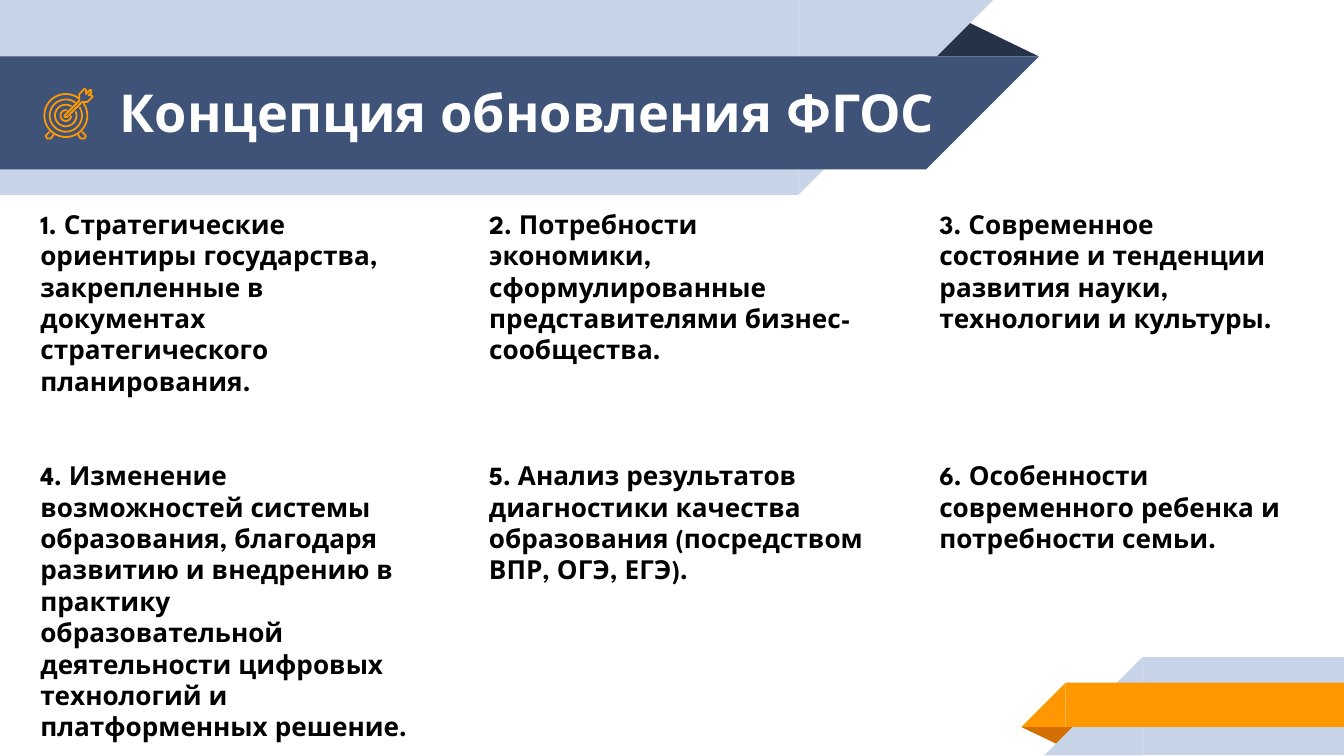
from dataclasses import dataclass
from math import cos, radians, sin

from pptx import Presentation
from pptx import util as u
from pptx.dml import color
from pptx.enum import shapes, text
from pptx.oxml import xmlchemy

COLORS = {
    "pale": "C7D3E6",
    "navy": "3F5378",
    "navy_fold": "263248",
    "orange": "FF9800",
    "orange_fold": "D26F00",
    "white": "FFFFFF",
    "black": "000000",
}
FONT = "League Spartan"
KIND = shapes.MSO_SHAPE
SLIDE_WIDTH = u.Inches(10)
SLIDE_HEIGHT = SLIDE_WIDTH * 9 // 16
TARGET_CENTER = (0.49, 0.86)


@dataclass
class Ribbon:
    kind: shapes.MSO_SHAPE
    left: float
    top: float
    width: float
    height: float
    color: str
    rotation: int = 0


@dataclass
class Ring:
    radius: float
    gap_start: int
    gap_end: int


@dataclass
class Column:
    left: float
    width: float


RIBBONS = [
    Ribbon(KIND.ISOSCELES_TRIANGLE, 6.88, 0.14, 0.85, 0.28, "navy_fold"),
    Ribbon(KIND.RECTANGLE, 0, 0, 5.94, 1.45, "pale"),
    Ribbon(KIND.RIGHT_TRIANGLE, 5.94, 0, 1.45, 1.45, "pale", 90),
    Ribbon(KIND.RECTANGLE, 0, 0.42, 6.89, 0.84, "navy"),
    Ribbon(KIND.RIGHT_TRIANGLE, 6.89, 0.42, 0.84, 0.84, "navy", 90),
    Ribbon(KIND.ISOSCELES_TRIANGLE, 7.6, 5.41, 0.43, 0.14, "orange_fold", 180),
    Ribbon(KIND.RECTANGLE, 8.5, 4.89, 1.5, 0.73, "pale"),
    Ribbon(KIND.RIGHT_TRIANGLE, 7.77, 4.89, 0.73, 0.73, "pale", 270),
    Ribbon(KIND.RECTANGLE, 7.93, 5.08, 2.08, 0.33, "orange"),
    Ribbon(KIND.RIGHT_TRIANGLE, 7.6, 5.08, 0.33, 0.33, "orange", 270),
]
RINGS = [Ring(0.16, -53, -35), Ring(0.12, -53, -32), Ring(0.08, -57, -22), Ring(0.04, -72, 0)]
LEFT_FOOT = [(0.37, 0.98), (0.35, 1), (0.34, 1.01), (0.35, 1.03), (0.36, 1.03), (0.38, 1.03), (0.4, 1)]
RIGHT_FOOT = [(2 * TARGET_CENTER[0] - x, y) for x, y in LEFT_FOOT]
ARROW = [
    (0.68, 0.71), (0.66, 0.71), (0.68, 0.69), (0.68, 0.67), (0.67, 0.67), (0.64, 0.7),
    (0.64, 0.67), (0.63, 0.66), (0.59, 0.7), (0.59, 0.75), (0.48, 0.86), (0.48, 0.87),
    (0.5, 0.87), (0.61, 0.76), (0.64, 0.76), (0.65, 0.76), (0.69, 0.72),
]
COLUMNS = [Column(0.2, 2.98), Column(3.54, 3), Column(6.89, 2.78)]
ROW_TOPS = [1.45, 3.32]
REASONS = [
    "1. Стратегические ориентиры государства, закрепленные в документах стратегического планирования.",
    "2. Потребности экономики, сформулированные представителями бизнес-сообщества.",
    "3. Современное состояние и тенденции развития науки, технологии и культуры.",
    "4. Изменение возможностей системы образования, благодаря развитию и внедрению в практику "
    "образовательной деятельности цифровых технологий и платформенных решение.",
    "5. Анализ результатов диагностики качества образования (посредством ВПР, ОГЭ, ЕГЭ).",
    "6. Особенности современного ребенка и потребности семьи.",
]


def rgb(name: str) -> color.RGBColor:
    return color.RGBColor.from_string(COLORS[name])


def draw_ribbon(slide, ribbon: Ribbon) -> None:
    box = map(u.Inches, (ribbon.left, ribbon.top, ribbon.width, ribbon.height))
    band = slide.shapes.add_shape(ribbon.kind, *box)
    band.rotation = ribbon.rotation
    band.shadow.inherit = False
    band.fill.solid()
    band.fill.fore_color.rgb = rgb(ribbon.color)
    band.line.fill.background()
    if ribbon.kind == KIND.ISOSCELES_TRIANGLE:
        band.adjustments[0] = 0.32


def draw_stroke(slide, points: list[tuple[float, float]], close: bool = False) -> None:
    start, *rest = [(u.Inches(x), u.Inches(y)) for x, y in points]
    builder = slide.shapes.build_freeform(*start)
    builder.add_line_segments(rest, close=close)
    stroke = builder.convert_to_shape()
    stroke.shadow.inherit = False
    stroke.fill.background()
    stroke.line.color.rgb = rgb("orange")
    stroke.line.width = u.Pt(0.96)


def ring_points(ring: Ring, steps: int = 48) -> list[tuple[float, float]]:
    sweep = 360 - (ring.gap_end - ring.gap_start)
    angles = [radians(ring.gap_end + sweep * i / steps) for i in range(steps + 1)]
    x, y = TARGET_CENTER
    return [(x + ring.radius * cos(a), y + ring.radius * sin(a)) for a in angles]


def write(holder, content: str, *, left: float, top: float, width: float, height: float,
          size: int, ink: str, anchor=text.MSO_ANCHOR.TOP, before: int = 0) -> None:
    holder.left, holder.top = u.Inches(left), u.Inches(top)
    holder.width, holder.height = u.Inches(width), u.Inches(height)
    frame = holder.text_frame
    frame.word_wrap = True
    frame.auto_size = text.MSO_AUTO_SIZE.NONE
    frame.vertical_anchor = anchor
    frame.margin_left = frame.margin_right = u.Inches(0.1)
    frame.margin_top = frame.margin_bottom = u.Inches(0.1)
    frame.text = content
    paragraph = frame.paragraphs[0]
    paragraph.alignment = text.PP_ALIGN.LEFT
    paragraph.space_before = u.Pt(before)
    properties = paragraph._p.get_or_add_pPr()
    properties.set("marL", "0")
    properties.set("indent", "0")
    properties.append(xmlchemy.OxmlElement("a:buNone"))
    font = paragraph.runs[0].font
    font.name, font.size, font.bold = FONT, u.Pt(size), True
    font.color.rgb = rgb(ink)
    holder.element.getparent().append(holder.element)


def main() -> None:
    deck = Presentation()
    deck.slide_width, deck.slide_height = SLIDE_WIDTH, SLIDE_HEIGHT
    slide = deck.slides.add_slide(deck.slide_layouts.get_by_name("Comparison"))
    title, *bodies = list(slide.placeholders)

    for ribbon in RIBBONS:
        draw_ribbon(slide, ribbon)

    write(title, "Концепция обновления ФГОС", left=0.79, top=0.41, width=6.68, height=0.84,
          size=28, ink="white", anchor=text.MSO_ANCHOR.MIDDLE)

    while len(bodies) < len(REASONS):
        bodies.append(slide.shapes.add_textbox(0, 0, 0, 0))
    cells = [(column, top) for top in ROW_TOPS for column in COLUMNS]
    for body, reason, (column, top) in zip(bodies, REASONS, cells):
        write(body, reason, left=column.left, top=top, width=column.width, height=1.66,
              size=14, ink="black", before=6)

    for ring in RINGS:
        draw_stroke(slide, ring_points(ring))
    draw_stroke(slide, LEFT_FOOT)
    draw_stroke(slide, RIGHT_FOOT)
    draw_stroke(slide, ARROW, close=True)

    deck.save("out.pptx")


if __name__ == "__main__":
    main()
